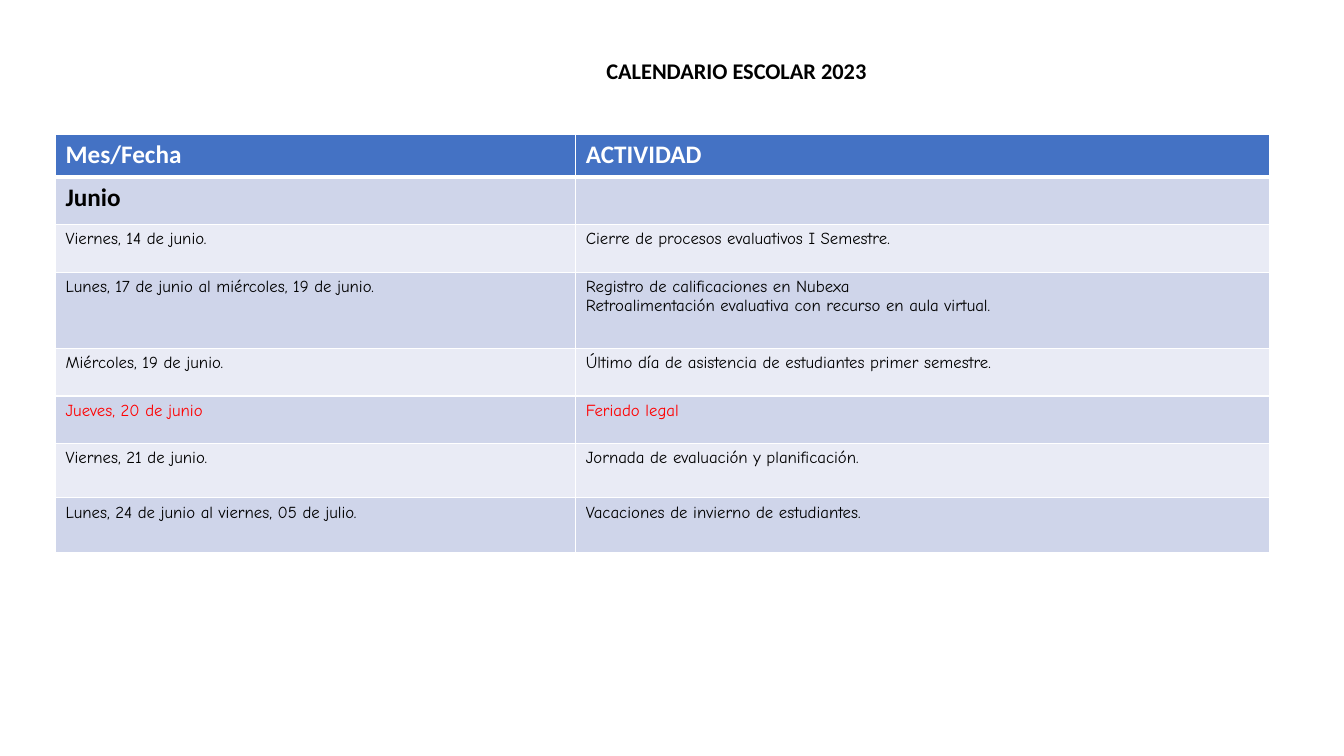
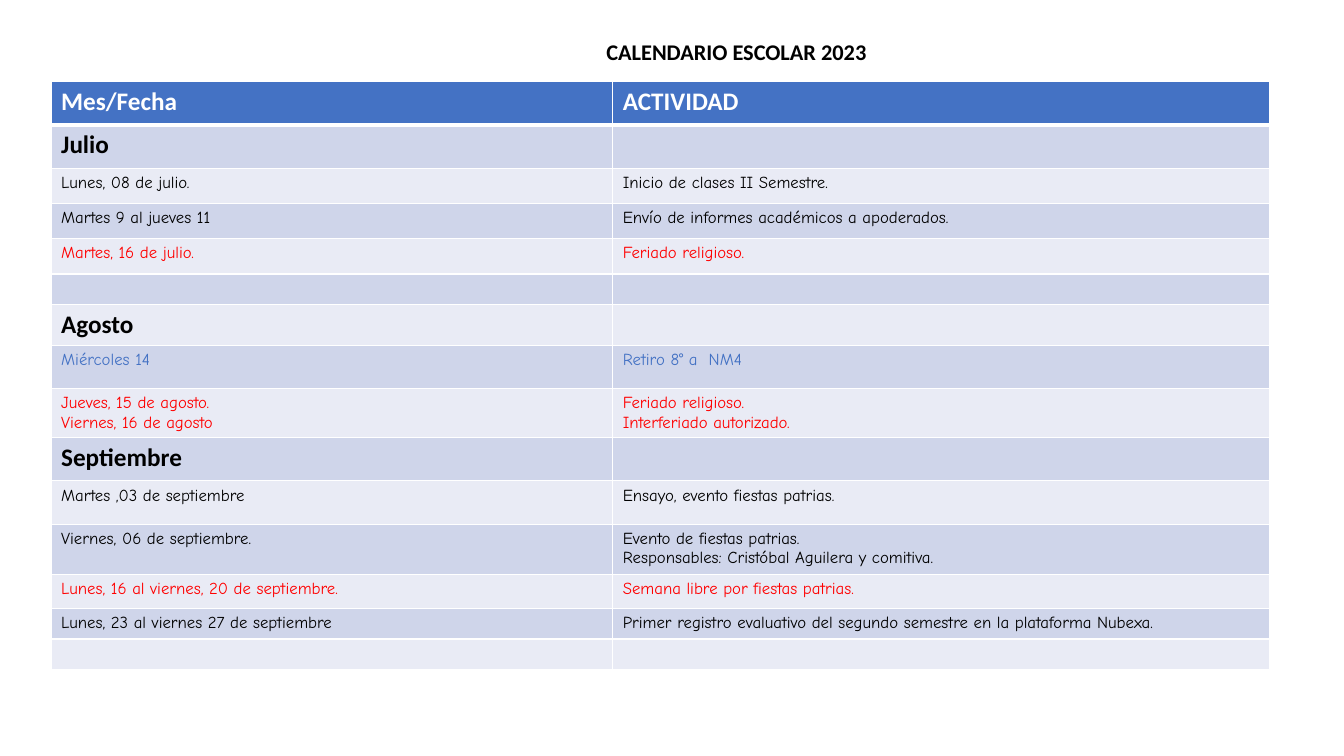
from dataclasses import dataclass

from lxml.etree import SubElement
from pptx import Presentation
from pptx.dml.color import RGBColor
from pptx.enum.text import MSO_ANCHOR, PP_ALIGN
from pptx.oxml.ns import qn
from pptx.util import Inches, Pt


@dataclass(frozen=True)
class Style:
    font: str
    size: int
    color: str
    bold: bool = False


@dataclass(frozen=True)
class Theme:
    slide_width: float = 13.33
    slide_height: float = 7.5
    header_fill: str = "4472C4"
    bands: tuple = ("CFD5EA", "E9EBF5")
    border: str = "FFFFFF"
    thin: int = 1
    thick: int = 3
    title: Style = Style("Calibri", 16, "000000", True)
    header: Style = Style("Calibri", 18, "FFFFFF", True)
    month: Style = Style("Calibri", 18, "000000", True)
    event: Style = Style("Comic Neue", 12, "000000")
    holiday: Style = Style("Comic Neue", 12, "FF0000")
    retreat: Style = Style("Comic Neue", 12, "4472C4")


@dataclass(frozen=True)
class Entry:
    height: float
    date: str = ""
    activity: str = ""
    style: Style = Theme.event


@dataclass(frozen=True)
class Calendar:
    title_top: float
    title_height: float
    left: float
    top: float
    columns: tuple
    entries: tuple


THEME = Theme()
TITLE = "CALENDARIO ESCOLAR 2023"
HEADER = Entry(5.73, "Mes/Fecha", "ACTIVIDAD", THEME.header)

FIRST_SEMESTER = Calendar(
    title_top=4, title_height=7.87, left=4.13, top=17.73, columns=(38.71, 51.61),
    entries=(
        Entry(6.27, "Junio", style=THEME.month),
        Entry(6.27, "Viernes, 14 de junio.", "Cierre de procesos evaluativos I Semestre."),
        Entry(10.13, "Lunes, 17 de junio al miércoles, 19 de junio.",
              "Registro de calificaciones en Nubexa\n"
              "Retroalimentación evaluativa con recurso en aula virtual."),
        Entry(6.27, "Miércoles, 19 de junio.",
              "Último día de asistencia de estudiantes primer semestre."),
        Entry(6.27, "Jueves, 20 de junio", "Feriado legal", THEME.holiday),
        Entry(7.2, "Viernes, 21 de junio.", "Jornada de evaluación y planificación."),
        Entry(7.2, "Lunes, 24 de junio al viernes, 05 de julio.",
              "Vacaciones de invierno de estudiantes."),
    ),
)

SECOND_SEMESTER = Calendar(
    title_top=3.2, title_height=6.13, left=3.8, top=10.8, columns=(41.79, 48.84),
    entries=(
        Entry(5.73, "Julio", style=THEME.month),
        Entry(4.67, "Lunes, 08 de julio.", "Inicio de clases II Semestre."),
        Entry(4.67, "Martes 9 al jueves 11", "Envío de informes académicos a apoderados."),
        Entry(4.67, "Martes, 16 de julio.", "Feriado religioso.", THEME.holiday),
        Entry(4),
        Entry(5.2, "Agosto", style=THEME.month),
        Entry(5.73, "Miércoles 14", "Retiro 8° a  NM4", THEME.retreat),
        Entry(5.73, "Jueves, 15 de agosto.\nViernes, 16 de agosto",
              "Feriado religioso.\nInterferiado autorizado.", THEME.holiday),
        Entry(5.73, "Septiembre", style=THEME.month),
        Entry(5.73, "Martes ,03 de septiembre", "Ensayo, evento fiestas patrias."),
        Entry(6.67, "Viernes, 06 de septiembre.",
              "Evento de fiestas patrias.\nResponsables: Cristóbal Aguilera y comitiva."),
        Entry(4.53, "Lunes, 16 al viernes, 20 de septiembre.",
              "Semana libre por fiestas patrias.", THEME.holiday),
        Entry(4, "Lunes, 23 al viernes 27 de septiembre",
              "Primer registro evaluativo del segundo semestre en la plataforma Nubexa."),
        Entry(4),
    ),
)


def across(percent):
    return Inches(THEME.slide_width * percent / 100)


def down(percent):
    return Inches(THEME.slide_height * percent / 100)


def add_text(paragraph, text, style):
    run = paragraph.add_run()
    run.text = text
    run.font.name = style.font
    run.font.size = Pt(style.size)
    run.font.bold = style.bold
    run.font.color.rgb = RGBColor.from_string(style.color)


def set_title(slide, calendar):
    title = slide.shapes.title
    title.left, title.top = across(21.23), down(calendar.title_top)
    title.width, title.height = across(67.14), down(calendar.title_height)
    title.text_frame.vertical_anchor = MSO_ANCHOR.BOTTOM
    heading = title.text_frame.paragraphs[0]
    heading.alignment = PP_ALIGN.CENTER
    heading.line_spacing = 0.9
    add_text(heading, TITLE, THEME.title)


def set_borders(cell, top, bottom):
    properties = cell._tc.get_or_add_tcPr()
    widths = {"L": THEME.thin, "R": THEME.thin, "T": top, "B": bottom}
    for side, width in widths.items():
        line = SubElement(properties, qn(f"a:ln{side}"), w=str(Pt(width)))
        SubElement(SubElement(line, qn("a:solidFill")), qn("a:srgbClr"), val=THEME.border)


def fill_cell(cell, text, style, row):
    set_borders(cell,
                top=THEME.thick if row == 1 else THEME.thin,
                bottom=THEME.thick if row == 0 else THEME.thin)
    band = THEME.bands[(row - 1) % len(THEME.bands)]
    cell.fill.solid()
    cell.fill.fore_color.rgb = RGBColor.from_string(THEME.header_fill if row == 0 else band)
    frame = cell.text_frame
    if not text:
        SubElement(frame.paragraphs[0]._p, qn("a:endParaRPr"), sz=str(THEME.event.size * 100))
        return
    for index, line in enumerate(text.split("\n")):
        paragraph = frame.add_paragraph() if index else frame.paragraphs[0]
        add_text(paragraph, line, style)


def add_schedule(slide, calendar):
    entries = (HEADER, *calendar.entries)
    schedule = slide.shapes.add_table(
        len(entries), len(calendar.columns),
        across(calendar.left), down(calendar.top),
        across(sum(calendar.columns)), down(sum(entry.height for entry in entries)),
    ).table
    for column, width in zip(schedule.columns, calendar.columns):
        column.width = across(width)
    for row, entry in enumerate(entries):
        schedule.rows[row].height = down(entry.height)
        for column, text in enumerate((entry.date, entry.activity)):
            fill_cell(schedule.cell(row, column), text, entry.style, row)


def main():
    presentation = Presentation()
    presentation.slide_width = Inches(THEME.slide_width)
    presentation.slide_height = Inches(THEME.slide_height)
    title_only = presentation.slide_layouts[5]
    for calendar in (FIRST_SEMESTER, SECOND_SEMESTER):
        slide = presentation.slides.add_slide(title_only)
        set_title(slide, calendar)
        add_schedule(slide, calendar)
    presentation.save("out.pptx")


if __name__ == "__main__":
    main()
